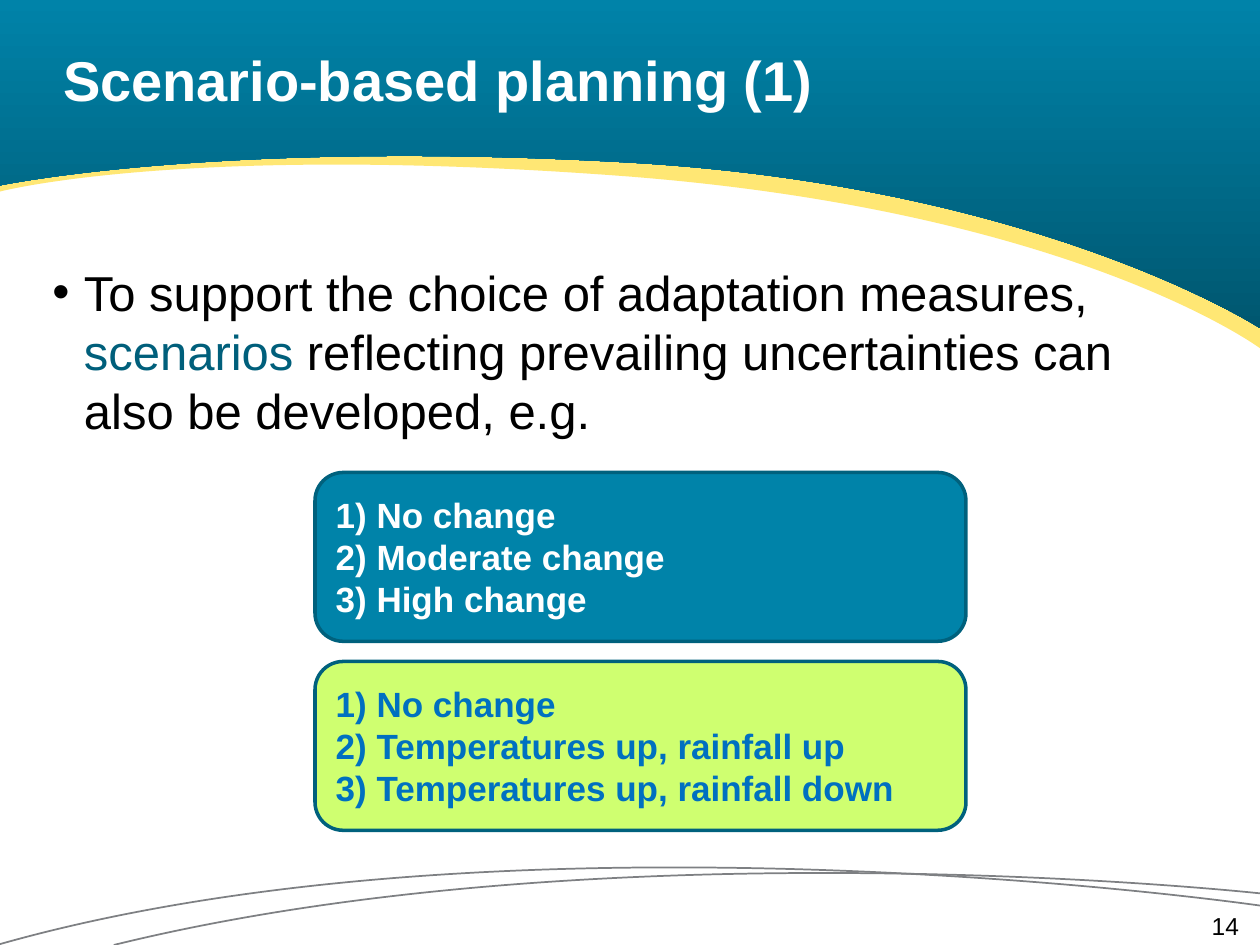
from lxml import etree
from pptx import Presentation
from pptx import util as u
from pptx.dml import color
from pptx.enum import shapes, text
from pptx.oxml import ns

Pt = u.Pt
FONT = "Arial"
WIDTH, HEIGHT = 720, 540
COLORS = {
    "white": "FFFFFF", "black": "000000", "yellow": "FFE774", "grey": "7E8083",
    "teal": "0083A9", "deep_teal": "005770", "border": "00617D",
    "accent": "005F7B", "lime": "CFFF70", "blue": "0070C0",
}


def rgb(name):
    return color.RGBColor.from_string(COLORS[name])


def add_outline(slide, box, commands):
    """Freeform that fills the box, drawn by (tag, points) commands relative to it."""
    left, top, width, height = box
    builder = slide.shapes.build_freeform(Pt(left), Pt(top), scale=1.0)
    builder.add_line_segments([(Pt(left + width), Pt(top)), (Pt(left + width), Pt(top + height)),
                               (Pt(left), Pt(top + height))])
    shape = builder.convert_to_shape()
    shape.shadow.inherit = False
    outline = next(shape._element.iter(ns.qn("a:path")))
    for child in list(outline):
        outline.remove(child)
    for tag, points in commands:
        command = etree.SubElement(outline, ns.qn(f"a:{tag}"))
        for x, y in points:
            etree.SubElement(command, ns.qn("a:pt"), x=str(Pt(x)), y=str(Pt(y)))
    return shape


def add_wave(slide, box, middle, right_handle, left_handle, left_edge):
    """Band from the top of the box down to a curve of two halves."""
    width, height = box[2:]
    start, end = (width, height), (0, left_edge)
    shape = add_outline(slide, box, [
        ("moveTo", [start]),
        ("cubicBezTo", [start, right_handle, middle]),
        ("cubicBezTo", [left_handle, end, end]),
        ("lnTo", [(0, 0)]),
        ("lnTo", [(width, 0)]),
        ("close", []),
    ])
    shape.line.fill.background()
    return shape


def add_header(slide, box):
    left, top, width, height = box
    yellow = add_wave(slide, box, (360.5, 101.5), (615, 121.7), (106, 82), 110)
    yellow.fill.solid()
    yellow.fill.fore_color.rgb = rgb("yellow")
    blue = add_wave(slide, (left, top, width, height - 11.5),
                    (360.5, 93.5), (595, 107), (126, 80), 106.5)
    blue.fill.gradient()
    blue.fill.gradient_angle = 270
    for stop, name in zip(blue.fill.gradient_stops, ("teal", "deep_teal")):
        stop.color.rgb = rgb(name)


def add_footer_curve(slide, box, right_edge, handle):
    width, height = box[2:]
    start = (width, right_edge)
    curve = add_outline(slide, box, [("moveTo", [start]),
                                     ("cubicBezTo", [start, handle, (0, height)])])
    curve.fill.background()
    curve.line.color.rgb = rgb("grey")
    curve.line.width = Pt(1)


def add_run(paragraph, words, size, name, bold=False):
    run = paragraph.add_run()
    run.text = words
    run.font.name = FONT
    run.font.size = Pt(size)
    run.font.bold = bold
    run.font.color.rgb = rgb(name)


def add_text_box(slide, box, anchor=text.MSO_ANCHOR.TOP):
    """Text box without insets; gives back its first paragraph."""
    frame = slide.shapes.add_textbox(*map(Pt, box)).text_frame
    frame.word_wrap = True
    frame.vertical_anchor = anchor
    frame.margin_left = frame.margin_top = frame.margin_right = frame.margin_bottom = 0
    return frame.paragraphs[0]


def add_title(slide, box):
    paragraph = add_text_box(slide, box, text.MSO_ANCHOR.MIDDLE)
    add_run(paragraph, "Scenario-based planning (1)", 32, "white", True)


def add_body(slide, box):
    paragraph = add_text_box(slide, box)
    paragraph.space_before = Pt(2)
    properties = paragraph._p.get_or_add_pPr()
    properties.set("marL", str(Pt(18)))
    properties.set("indent", str(-Pt(18)))
    etree.SubElement(properties, ns.qn("a:buFont")).set("typeface", FONT)
    etree.SubElement(properties, ns.qn("a:buChar")).set("char", "•")
    add_run(paragraph, "To support the choice of adaptation measures, ", 28, "black")
    add_run(paragraph, "scenarios ", 28, "accent")
    add_run(paragraph, "reflecting prevailing uncertainties can ", 28, "black")
    paragraph.add_line_break()
    add_run(paragraph, "also be developed, e.g.", 28, "black")


def add_scenarios(slide, box, lines, fill, ink):
    shape = slide.shapes.add_shape(shapes.MSO_SHAPE.ROUNDED_RECTANGLE, *map(Pt, box))
    shape.shadow.inherit = False
    shape.fill.solid()
    shape.fill.fore_color.rgb = rgb(fill)
    shape.line.color.rgb = rgb("border")
    shape.line.width = Pt(2)
    frame = shape.text_frame
    frame.word_wrap = True
    frame.vertical_anchor = text.MSO_ANCHOR.MIDDLE
    for number, line in enumerate(lines, 1):
        paragraph = frame.paragraphs[0] if number == 1 else frame.add_paragraph()
        paragraph.alignment = text.PP_ALIGN.LEFT
        add_run(paragraph, f"{number}) {line}", 20, ink, True)


def add_slide_number(slide, box):
    paragraph = add_text_box(slide, box)
    paragraph.alignment = text.PP_ALIGN.RIGHT
    add_run(paragraph, "14", 14, "black")


def main():
    presentation = Presentation()
    presentation.slide_width, presentation.slide_height = Pt(WIDTH), Pt(HEIGHT)
    slide = presentation.slides.add_slide(presentation.slide_layouts[6])
    add_footer_curve(slide, (65, 470, 655, 70), 40.5, (284, 0))
    add_footer_curve(slide, (0, 456, 720, 83.5), 61.5, (295, 0))
    add_header(slide, (0, -0.5, WIDTH, 199.5))
    add_title(slide, (36, 0, 672, 90))
    add_body(slide, (30, 150, 672, 378))
    add_slide_number(slide, (540, 520.5, 168, 13))
    scenario_sets = (
        (("No change", "Moderate change", "High change"), "teal", "white"),
        (("No change", "Temperatures up, rainfall up", "Temperatures up, rainfall down"),
         "lime", "blue"),
    )
    for index, scenario_set in enumerate(scenario_sets):
        add_scenarios(slide, (180, 270 + 108 * index, 372, 96.5), *scenario_set)
    presentation.save("out.pptx")


if __name__ == "__main__":
    main()
